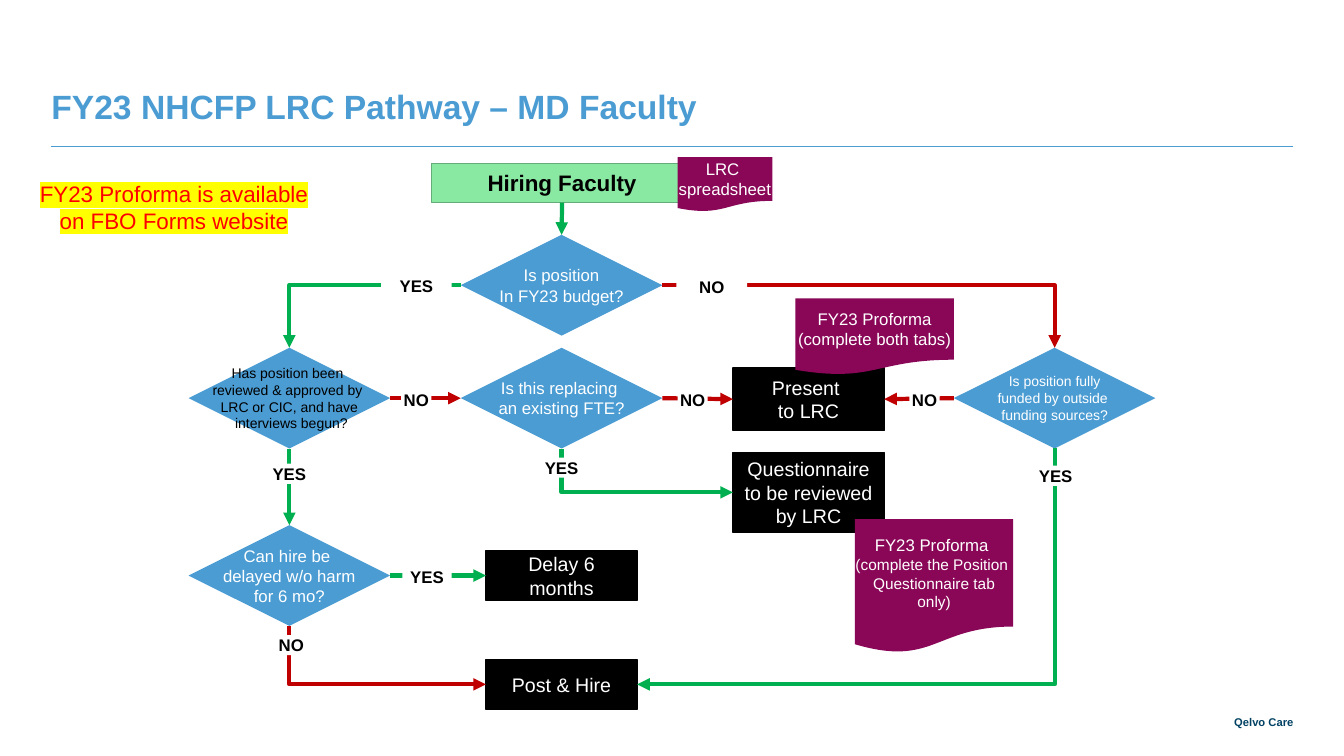
"""Build a one-slide decision flowchart for hiring MD faculty."""
from lxml import etree
from pptx import Presentation
from pptx import util as u
from pptx.dml import color
from pptx.enum import shapes, text
from pptx.oxml import ns

THEME = {
    "font": "Arial",
    "blue": "4B9CD3", "navy": "004163", "purple": "8A0758",
    "mint": "89E8A2", "mint_edge": "65AC78",
    "yes": "00B050", "no": "C00000", "red": "FF0000", "yellow": "FFFF00",
    "black": "000000", "white": "FFFFFF",
    "title": 24, "heading": 16, "outcome": 14, "body": 12, "detail": 11, "small": 10, "footer": 8,
    "rule": 0.5, "edge": 1, "arrow": 3,
}
TITLE = "FY23 NHCFP LRC Pathway – MD Faculty"
FOOTER = "Qelvo Care"
NOTICE = "FY23 Proforma is available on FBO Forms website"

DIAMOND_SIZE = (2, 1)
DECISIONS = {
    "budget": (4.57, 2.33, "body", "white", ["Is position", "In FY23 budget?"]),
    "reviewed": (1.87, 3.45, "small", "black",
                 ["Has position been ", "reviewed & approved by ", "LRC or CIC, and have", " interviews begun?"]),
    "replacing": (4.57, 3.45, "body", "white", ["Is this replacing ", "an existing FTE?"]),
    "funded": (9.46, 3.45, "small", "white", ["Is position fully", "funded by outside ", "funding sources?"]),
    "delayed": (1.87, 5.21, "body", "white", ["Can hire be ", "delayed w/o harm", "for 6 mo?"]),
}
OUTCOME_WIDTH = 1.5
OUTCOMES = {
    "present": (7.27, 3.65, 0.62, ["Present ", "to LRC"]),
    "questionnaire": (7.27, 4.49, 0.79, ["Questionnaire to be reviewed by LRC"]),
    "delay": (4.82, 5.46, 0.5, ["Delay 6 months"]),
    "post": (4.82, 6.54, 0.5, ["Post & Hire"]),
}
TOP, LEFT, BOTTOM, RIGHT = range(4)
STRAIGHT_ARROWS = [
    ("hiring", BOTTOM, "budget", TOP, "yes"),
    ("reviewed", RIGHT, "replacing", LEFT, "no"),
    ("replacing", RIGHT, "present", LEFT, "no"),
    ("funded", LEFT, "present", RIGHT, "no"),
    ("reviewed", BOTTOM, "delayed", TOP, "yes"),
    ("delayed", RIGHT, "delay", LEFT, "yes"),
]
ELBOW_ARROWS = [
    ("budget", LEFT, "reviewed", TOP, "yes", "tailEnd"),
    ("budget", RIGHT, "funded", TOP, "no", "tailEnd"),
    ("questionnaire", LEFT, "replacing", BOTTOM, "yes", "headEnd"),
    ("post", LEFT, "delayed", BOTTOM, "no", "headEnd"),
    ("post", RIGHT, "funded", BOTTOM, "yes", "headEnd"),
]
LABEL_HEIGHT = 0.2
LABELS = [
    ("YES", 3.78, 2.74, 0.7), ("NO", 6.71, 2.75, 0.7),
    ("NO", 3.98, 3.87, 0.3), ("NO", 6.72, 3.87, 0.3), ("NO", 9.02, 3.87, 0.3),
    ("YES", 2.52, 4.6, 0.7), ("YES", 5.22, 4.54, 0.7), ("YES", 10.12, 4.62, 0.7),
    ("YES", 3.99, 5.62, 0.49), ("NO", 2.74, 6.3, 0.3),
]
DOCUMENTS = [
    ((6.72, 1.56, 0.94, 0.54), "body", ["LRC ", "spreadsheet"]),
    ((7.89, 2.96, 1.57, 0.76), "body", ["FY23 Proforma", "(complete both tabs)"]),
    ((8.48, 5.15, 1.57, 1.33), "detail",
     ["FY23 Proforma ", "(complete the Position ", "Questionnaire tab", "only)"]),
]


def rgb(name):
    return color.RGBColor.from_string(THEME[name])


def write(shape, lines, size, ink, bold=False, align=text.PP_ALIGN.CENTER,
          anchor=text.MSO_ANCHOR.MIDDLE, wrap=True):
    frame = shape.text_frame
    frame.text = "\n".join(lines)
    frame.word_wrap = wrap
    frame.vertical_anchor = anchor
    for paragraph in frame.paragraphs:
        paragraph.alignment = align
        for run in paragraph.runs:
            run.font.name = THEME["font"]
            run.font.size = u.Pt(THEME[size])
            run.font.bold = bold
            run.font.color.rgb = rgb(ink)
    return frame


def add_box(slide, kind, box, fill, edge=None):
    shape = slide.shapes.add_shape(kind, *map(u.Inches, box))
    shape.shadow.inherit = False
    shape.fill.solid()
    shape.fill.fore_color.rgb = rgb(fill)
    if edge:
        shape.line.color.rgb = rgb(edge)
        shape.line.width = u.Pt(THEME["edge"])
    else:
        shape.line.fill.background()
    return shape


def add_textbox(slide, box, top_inset=0):
    shape = slide.shapes.add_textbox(*map(u.Inches, box))
    frame = shape.text_frame
    frame.margin_left = frame.margin_right = frame.margin_bottom = 0
    frame.margin_top = u.Inches(top_inset)
    return shape


def add_line(slide, kind, ends, ink, width):
    line = slide.shapes.add_connector(kind, *map(u.Inches, ends))
    line.line.color.rgb = rgb(ink)
    line.line.width = u.Pt(THEME[width])
    etree.SubElement(line._element.spPr, ns.qn("a:effectLst"))
    return line


def add_arrow(slide, nodes, kind, start, start_site, end, end_site, ink, arrowhead="tailEnd"):
    arrow = add_line(slide, kind, (0, 0, 1, 1), ink, "arrow")
    arrow.begin_connect(nodes[start], start_site)
    arrow.end_connect(nodes[end], end_site)
    outline = arrow.line._get_or_add_ln()
    etree.SubElement(outline, ns.qn("a:" + arrowhead), type="triangle")
    if kind == shapes.MSO_CONNECTOR.ELBOW:
        arrow._element.spPr.find(ns.qn("a:prstGeom")).set("prst", "bentConnector2")


def add_frame(slide):
    footer = add_textbox(slide, (11.19, 7, 1.64, 0.23))
    write(footer, [FOOTER], "footer", "navy", True, text.PP_ALIGN.RIGHT, text.MSO_ANCHOR.BOTTOM)
    add_line(slide, shapes.MSO_CONNECTOR.STRAIGHT, (0.51, 1.45, 12.82, 1.45), "blue", "rule")
    title = add_textbox(slide, (0.51, 0.85, 12.31, 0.4))
    frame = write(title, [TITLE], "title", "blue", True, text.PP_ALIGN.LEFT, text.MSO_ANCHOR.BOTTOM)
    frame.paragraphs[0].line_spacing = u.Pt(28)


def add_nodes(slide):
    kinds = shapes.MSO_SHAPE
    hiring = add_box(slide, kinds.FLOWCHART_PROCESS, (4.28, 1.62, 2.59, 0.39), "mint", "mint_edge")
    write(hiring, ["Hiring Faculty"], "heading", "black", True)
    nodes = {"hiring": hiring}
    for name, (left, top, size, ink, lines) in DECISIONS.items():
        nodes[name] = add_box(slide, kinds.FLOWCHART_DECISION, (left, top, *DIAMOND_SIZE), "blue")
        write(nodes[name], lines, size, ink, wrap=False)
    for name, (left, top, height, lines) in OUTCOMES.items():
        box = (left, top, OUTCOME_WIDTH, height)
        nodes[name] = add_box(slide, kinds.FLOWCHART_PROCESS, box, "black", "black")
        write(nodes[name], lines, "outcome", "white")
    return nodes


def add_annotations(slide):
    for word, left, top, width in LABELS:
        label = add_box(slide, shapes.MSO_SHAPE.RECTANGLE, (left, top, width, LABEL_HEIGHT), "white")
        write(label, [word], "body", "black", True, wrap=False)
    for box, size, lines in DOCUMENTS:
        document = add_box(slide, shapes.MSO_SHAPE.FLOWCHART_DOCUMENT, box, "purple")
        frame = write(document, lines, size, "white", wrap=False)
        frame.paragraphs[0].runs[0].font.size = u.Pt(THEME["body"])
    notice = add_textbox(slide, (0.39, 1.71, 2.67, 0.96), 0.08)
    frame = write(notice, [NOTICE], "heading", "red", anchor=text.MSO_ANCHOR.TOP)
    properties = frame.paragraphs[0].runs[0].font._element
    highlight = etree.Element(ns.qn("a:highlight"))
    etree.SubElement(highlight, ns.qn("a:srgbClr"), val=THEME["yellow"])
    properties.find(ns.qn("a:solidFill")).addnext(highlight)


def main():
    presentation = Presentation()
    presentation.slide_width, presentation.slide_height = u.Inches(13.33), u.Inches(7.5)
    slide = presentation.slides.add_slide(presentation.slide_layouts[6])
    add_frame(slide)
    nodes = add_nodes(slide)
    for arrow in STRAIGHT_ARROWS:
        add_arrow(slide, nodes, shapes.MSO_CONNECTOR.STRAIGHT, *arrow)
    for arrow in ELBOW_ARROWS:
        add_arrow(slide, nodes, shapes.MSO_CONNECTOR.ELBOW, *arrow)
    add_annotations(slide)
    presentation.save("out.pptx")


if __name__ == "__main__":
    main()
